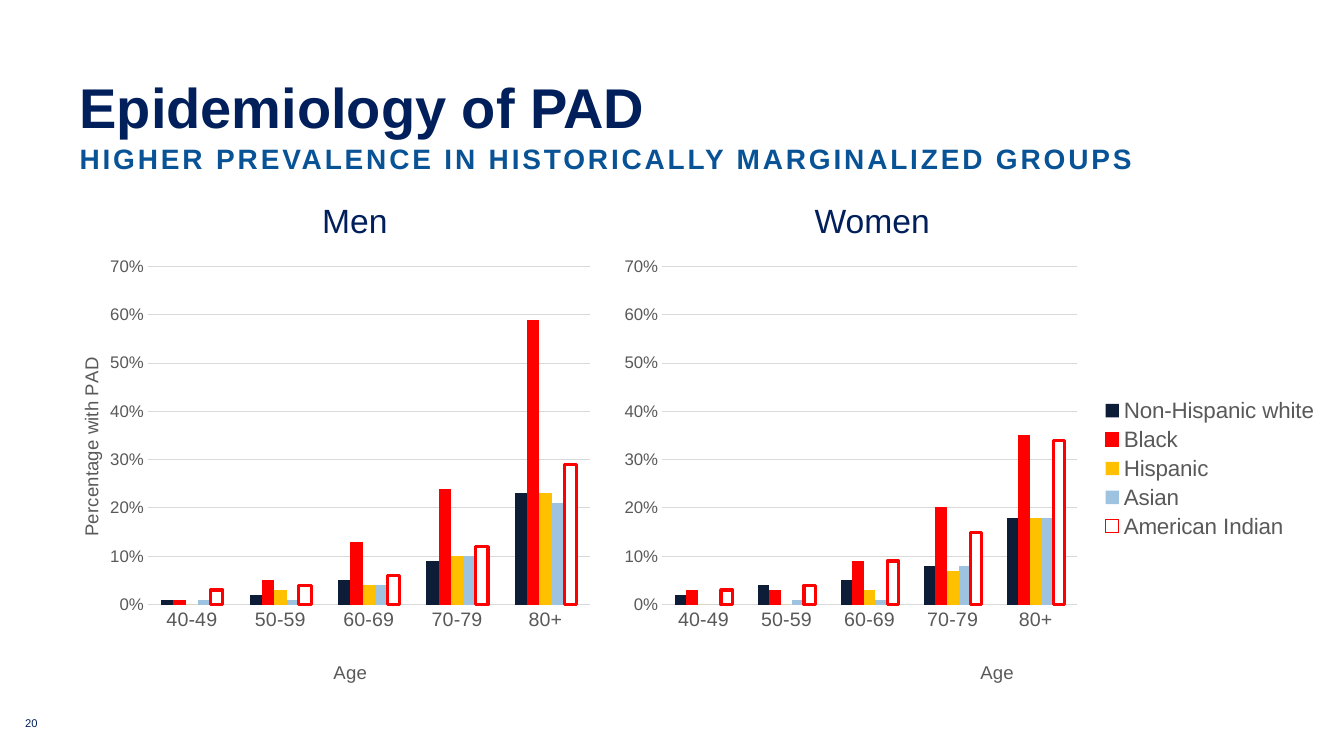
"""Build a slide comparing PAD prevalence by age and group in men and women."""
from pptx import Presentation
from pptx.chart.data import CategoryChartData
from pptx.dml.color import RGBColor
from pptx.enum.chart import XL_CHART_TYPE, XL_LEGEND_POSITION, XL_TICK_MARK
from pptx.enum.text import MSO_ANCHOR
from pptx.oxml import parse_xml
from pptx.oxml.ns import nsdecls
from pptx.util import Inches, Pt

WIDTH, HEIGHT = Inches(13.33), Inches(7.5)
NAVY = RGBColor(0x01, 0x1F, 0x5B)
BLUE = RGBColor(0x08, 0x52, 0x96)
GREY = RGBColor(0x59, 0x59, 0x59)
RULE = RGBColor(0xD9, 0xD9, 0xD9)
INK = RGBColor(0x0D, 0x1D, 0x37)
RED = RGBColor(0xFF, 0x00, 0x00)
GOLD = RGBColor(0xFF, 0xC0, 0x00)
SKY = RGBColor(0x9E, 0xC3, 0xE1)
WHITE = RGBColor(0xFF, 0xFF, 0xFF)

AGES = ["40-49", "50-59", "60-69", "70-79", "80+"]
GROUPS = {
    "Non-Hispanic white": INK,
    "Black": RED,
    "Hispanic": GOLD,
    "Asian": SKY,
    "American Indian": WHITE,
}
MEN = [
    [0.01, 0.02, 0.05, 0.09, 0.23],
    [0.01, 0.05, 0.13, 0.24, 0.59],
    [0, 0.03, 0.04, 0.1, 0.23],
    [0.01, 0.01, 0.04, 0.1, 0.21],
    [0.03, 0.04, 0.06, 0.12, 0.29],
]
WOMEN = [
    [0.02, 0.04, 0.05, 0.08, 0.18],
    [0.03, 0.03, 0.09, 0.2, 0.35],
    [0, 0, 0.03, 0.07, 0.18],
    [0, 0.01, 0.01, 0.08, 0.18],
    [0.03, 0.04, 0.09, 0.15, 0.34],
]


def set_format(target, values):
    """Set every attribute named in values on target."""
    for name, value in values.items():
        setattr(target, name, value)


def style_font(font, size, color, bold=False):
    """Give a font its face, size, weight and colour."""
    set_format(font, {"name": "Arial", "size": Pt(size), "bold": bold})
    font.color.rgb = color


def add_text(page, left, top, width, height, text, size, color, bold=False,
             anchor=MSO_ANCHOR.TOP, line_spacing=1.0, tracking=0, tabs=()):
    """Add one line of text at inches from the page corner."""
    box = page.shapes.add_textbox(*map(Inches, (left, top, width, height)))
    frame = box.text_frame
    set_format(frame, {
        "word_wrap": True, "vertical_anchor": anchor, "margin_left": 0,
        "margin_right": 0, "margin_top": 0, "margin_bottom": 0,
    })
    para = frame.paragraphs[0]
    para.line_spacing = line_spacing
    if tabs:
        stops = "".join(
            f'<a:tab pos="{Inches(stop)}" algn="ctr"/>' for stop in tabs)
        para._p.get_or_add_pPr().append(
            parse_xml(f'<a:tabLst {nsdecls("a")}>{stops}</a:tabLst>'))
    span = para.add_run()
    span.text = text
    style_font(span.font, size, color, bold)
    if tracking:
        span.font._element.set("spc", str(tracking * 100))


def place_part(part, index, shares, inner=False):
    """Fix a chart part at shares of the chart's size."""
    for layout in part.xpath("c:layout"):
        part.remove(layout)
    target = '<c:layoutTarget val="inner"/>' if inner else ""
    modes = '<c:xMode val="edge"/><c:yMode val="edge"/>'
    sizes = "".join(
        f'<c:{name} val="{share}"/>' for name, share in zip("xywh", shares))
    part.insert(index, parse_xml(
        f'<c:layout {nsdecls("c")}><c:manualLayout>{target}{modes}{sizes}'
        '</c:manualLayout></c:layout>'))


def add_axis_title(axis, text, shares):
    """Title an axis at a fixed spot in the chart."""
    title = axis.axis_title
    title.text_frame.text = text
    style_font(title.text_frame.paragraphs[0].runs[0].font, 13.3, GREY)
    place_part(title._element, 1, shares)


def style_axes(chart):
    """Style both axes and the gridlines."""
    ages, percent = chart.category_axis, chart.value_axis
    for axis, size in ((ages, 14), (percent, 12)):
        set_format(axis, {"major_tick_mark": XL_TICK_MARK.NONE,
                          "minor_tick_mark": XL_TICK_MARK.NONE})
        style_font(axis.tick_labels.font, size, GREY)
    set_format(percent, {"minimum_scale": 0, "maximum_scale": 0.7,
                         "major_unit": 0.1, "has_major_gridlines": True})
    set_format(percent.tick_labels, {"number_format": "0%",
                                     "number_format_is_linked": False})
    for line in (ages.format.line, percent.major_gridlines.format.line):
        line.color.rgb = RULE
        line.width = Pt(0.75)
    percent.format.line.fill.background()
    add_axis_title(ages, "Age", (0.51, 0.93))


def add_prevalence_chart(page, left, width, rows, plot_left, plot_width,
                         outlines):
    """Add a clustered column chart of prevalence by age."""
    data = CategoryChartData(number_format="0%")
    data.categories = AGES
    for name, row in zip(GROUPS, rows):
        data.add_series(name, row)
    chart = page.shapes.add_chart(
        XL_CHART_TYPE.COLUMN_CLUSTERED,
        *map(Inches, (left, 2.47, width, 4.37)), data).chart
    set_format(chart, {"has_title": False, "has_legend": False})
    style_font(chart.font, 10, GREY)
    plot = chart.plots[0]
    set_format(plot, {"gap_width": 216, "overlap": 0,
                      "vary_by_categories": False})
    for series, color in zip(plot.series, GROUPS.values()):
        series.invert_if_negative = False
        series.format.fill.solid()
        series.format.fill.fore_color.rgb = color
        if series.name in outlines:
            series.format.line.color.rgb = RED
            series.format.line.width = Pt(outlines[series.name])
    style_axes(chart)
    place_part(chart.element.xpath("c:chart/c:plotArea")[0], 0,
               (plot_left, 0.04, plot_width, 0.77), inner=True)
    return chart


def add_legend(chart):
    """Add the legend to the right of the plot."""
    chart.has_legend = True
    set_format(chart.legend, {"position": XL_LEGEND_POSITION.RIGHT,
                              "include_in_layout": False})
    style_font(chart.legend.font, 16, GREY)
    place_part(chart.element.xpath("c:chart/c:legend")[0], 1,
               (0.68, 0.33, 0.31, 0.34))


def main():
    """Build and save the deck."""
    deck = Presentation()
    set_format(deck, {"slide_width": WIDTH, "slide_height": HEIGHT})
    page = deck.slides.add_slide(deck.slide_layouts[6])
    add_text(page, 0.79, 0.79, 11.76, 0.61, "Epidemiology of PAD", 40, NAVY,
             bold=True, line_spacing=0.9)
    add_text(page, 0.25, 7.04, 0.29, 0.2, "20", 8, NAVY,
             anchor=MSO_ANCHOR.BOTTOM)
    add_text(page, 0.79, 1.4, 11.76, 0.38,
             "HIGHER PREVALENCE IN HISTORICALLY MARGINALIZED GROUPS", 20,
             BLUE, bold=True, tracking=2)
    men = add_prevalence_chart(page, 0.48, 5.48, MEN, 0.18, 0.8,
                               {"American Indian": 2.25})
    add_axis_title(men.value_axis, "Percentage with PAD", (0.05, 0.24))
    women = add_prevalence_chart(page, 6.07, 7.1, WOMEN, 0.07, 0.58,
                                 {"Black": 0.75, "American Indian": 2.25})
    add_legend(women)
    add_text(page, 0.46, 1.98, 10.31, 0.4, "\tMen\tWomen", 24, NAVY,
             tabs=(3.06, 8.19))
    deck.save("out.pptx")


if __name__ == "__main__":
    main()
